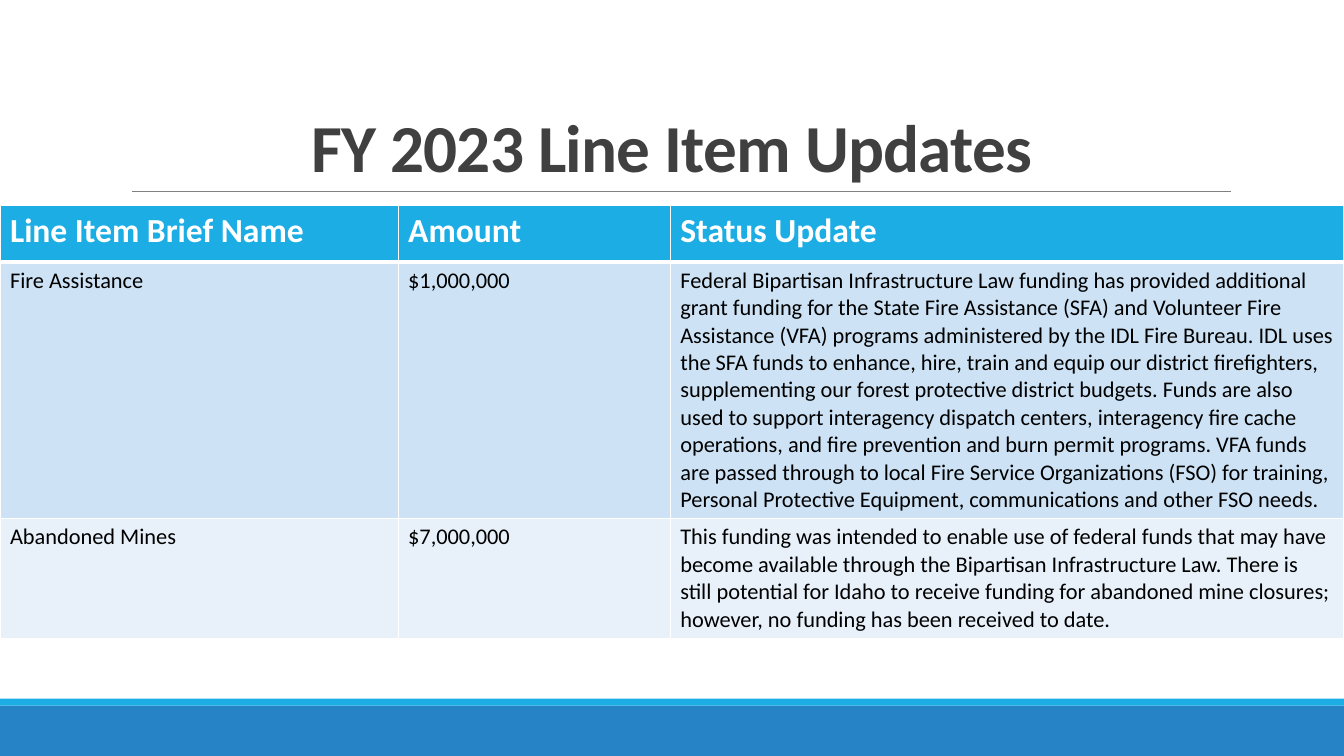
from lxml import etree
from pptx import Presentation
from pptx.dml.color import RGBColor
from pptx.enum.shapes import MSO_CONNECTOR, MSO_SHAPE
from pptx.enum.text import MSO_ANCHOR, MSO_AUTO_SIZE, PP_ALIGN
from pptx.oxml.ns import qn
from pptx.util import Pt

TITLE = "FY 2023 Line Item Updates"
ROWS = [
    ("Line Item Brief Name", "Amount", "Status Update"),
    ("Fire Assistance", "$1,000,000",
     "Federal Bipartisan Infrastructure Law funding has provided additional grant "
     "funding for the State Fire Assistance (SFA) and Volunteer Fire Assistance (VFA) "
     "programs administered by the IDL Fire Bureau. IDL uses the SFA funds to enhance, "
     "hire, train and equip our district firefighters, supplementing our forest "
     "protective district budgets. Funds are also used to support interagency dispatch "
     "centers, interagency fire cache operations, and fire prevention and burn permit "
     "programs. VFA funds are passed through to local Fire Service Organizations (FSO) "
     "for training, Personal Protective Equipment, communications and other FSO needs."),
    ("Abandoned Mines", "$7,000,000",
     "This funding was intended to enable use of federal funds that may have become "
     "available through the Bipartisan Infrastructure Law. There is still potential for "
     "Idaho to receive funding for abandoned mine closures; however, no funding has been "
     "received to date."),
]

WHITE = RGBColor(0xFF, 0xFF, 0xFF)
BLACK = RGBColor(0, 0, 0)
CHARCOAL = RGBColor(0x40, 0x40, 0x40)
GRAY = RGBColor(0x80, 0x80, 0x80)
BLUE = RGBColor(0x26, 0x83, 0xC6)
CYAN = RGBColor(0x1C, 0xAD, 0xE4)
ROW_FILLS = [CYAN, RGBColor(0xCD, 0xE3, 0xF5), RGBColor(0xE8, 0xF1, 0xFA)]

WIDTH, HEIGHT = 960, 540
COLUMN_WIDTHS = [284.4, 194.4, 481.2]
ROW_HEIGHTS = [40.3, 183, 85.3]
TABLE_TOP = 146.9
RULE_LEFT, RULE_RIGHT, RULE_TOP = 94.3, 879, 136.8
BARS = [(504, 36, BLUE), (499, 5, CYAN)]


def write(frame, text, size, color, bold=False, align=PP_ALIGN.LEFT,
          line_spacing=None, tracking=None):
    """Fill a text frame with one formatted run; tracking is in points."""
    para = frame.paragraphs[0]
    para.alignment = align
    para.line_spacing = line_spacing
    span = para.add_run()
    span.text = text
    span.font.name = "Calibri"
    span.font.size = Pt(size)
    span.font.bold = bold
    span.font.color.rgb = color
    if tracking is not None:
        span._r.get_or_add_rPr().set("spc", str(round(tracking * 100)))


def add_borders(cell, top, bottom):
    properties = cell._tc.get_or_add_tcPr()
    for side, width in (("L", 1), ("R", 1), ("T", top), ("B", bottom)):
        line = etree.SubElement(properties, qn(f"a:ln{side}"), w=str(Pt(width)))
        fill = etree.SubElement(line, qn("a:solidFill"))
        etree.SubElement(fill, qn("a:srgbClr"), val=str(WHITE))


def add_bars(page):
    for top, height, color in BARS:
        bar = page.shapes.add_shape(MSO_SHAPE.RECTANGLE, 0, Pt(top), Pt(WIDTH), Pt(height))
        bar.shadow.inherit = False
        bar.fill.solid()
        bar.fill.fore_color.rgb = color
        bar.line.fill.background()


def add_rule(page):
    rule = page.shapes.add_connector(MSO_CONNECTOR.STRAIGHT, Pt(RULE_LEFT), Pt(RULE_TOP),
                                     Pt(RULE_RIGHT), Pt(RULE_TOP))
    rule.line.color.rgb = GRAY
    rule.line.width = Pt(0.5)
    etree.SubElement(rule._element.spPr, qn("a:effectLst"))


def add_title(page):
    title = page.shapes.title
    title.left, title.top, title.width, title.height = 0, Pt(22.3), Pt(WIDTH), Pt(114.5)
    frame = title.text_frame
    frame.word_wrap = True
    frame.auto_size = MSO_AUTO_SIZE.NONE
    frame.vertical_anchor = MSO_ANCHOR.BOTTOM
    write(frame, TITLE, 48, CHARCOAL, bold=True, align=PP_ALIGN.CENTER,
          line_spacing=0.85, tracking=-0.5)


def add_updates_table(page):
    table = page.shapes.add_table(len(ROWS), len(COLUMN_WIDTHS), 0, Pt(TABLE_TOP),
                                  Pt(WIDTH), Pt(sum(ROW_HEIGHTS))).table
    for column, width in zip(table.columns, COLUMN_WIDTHS):
        column.width = Pt(width)
    for index, texts in enumerate(ROWS):
        table.rows[index].height = Pt(ROW_HEIGHTS[index])
        header = index == 0
        for cell, text in zip(table.rows[index].cells, texts):
            add_borders(cell, top=3 if index == 1 else 1, bottom=3 if header else 1)
            cell.fill.solid()
            cell.fill.fore_color.rgb = ROW_FILLS[index]
            write(cell.text_frame, text, 24 if header else 16,
                  WHITE if header else BLACK, bold=header)


def main():
    deck = Presentation()
    deck.slide_width, deck.slide_height = Pt(WIDTH), Pt(HEIGHT)
    page = deck.slides.add_slide(deck.slide_layouts[5])
    add_bars(page)
    add_rule(page)
    add_title(page)
    add_updates_table(page)
    deck.save("out.pptx")


if __name__ == "__main__":
    main()
